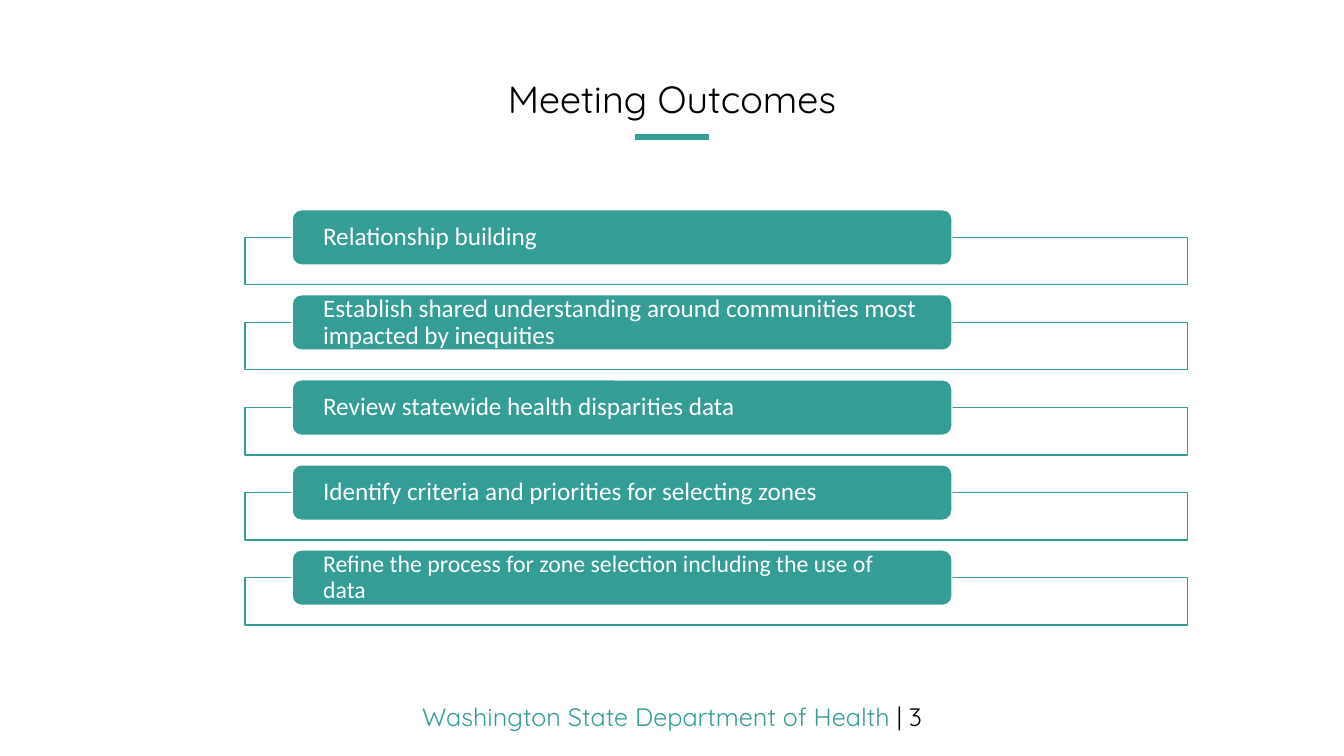
from lxml.etree import SubElement
from pptx import Presentation
from pptx.dml.color import RGBColor
from pptx.enum.shapes import MSO_CONNECTOR, MSO_SHAPE
from pptx.enum.text import MSO_ANCHOR, PP_ALIGN
from pptx.oxml.ns import qn
from pptx.util import Inches, Pt

WIDTH, HEIGHT = 13.33, 7.5
TEAL, WHITE, BLACK = "349D96", "FFFFFF", "000000"
OUTCOMES = [
    ("Relationship building", 18),
    ("Establish shared understanding around communities most impacted by inequities", 18),
    ("Review statewide health disparities data", 18),
    ("Identify criteria and priorities for selecting zones", 18),
    ("Refine the process for zone selection including the use of data", 17),
]


def color(value):
    return RGBColor.from_string(value)


def add_run(para, text, size, font, value):
    span = para.add_run()
    span.text = text
    span.font.size = Pt(size)
    span.font.name = font
    span.font.color.rgb = color(value)


def add_centered_line(page, top, height, runs, size):
    """Place one line of (text, colour) runs across the whole slide width."""
    box = page.shapes.add_textbox(0, Inches(top), Inches(WIDTH), Inches(height))
    frame = box.text_frame
    frame.word_wrap = True
    frame.vertical_anchor = MSO_ANCHOR.MIDDLE
    para = frame.paragraphs[0]
    para.alignment = PP_ALIGN.CENTER
    for text, value in runs:
        add_run(para, text, size, "Quicksand", value)
    return para


def add_title(page, top, height):
    para = add_centered_line(page, top, height, [("Meeting Outcomes", BLACK)], 27)
    para.line_spacing = 0.9
    middle, half, level = WIDTH / 2, 0.37, top + height + 0.09
    rule = page.shapes.add_connector(
        MSO_CONNECTOR.STRAIGHT, Inches(middle - half), Inches(level),
        Inches(middle + half), Inches(level))
    rule.line.color.rgb = color(TEAL)
    rule.line.width = Pt(4)
    SubElement(rule._element.spPr, qn("a:effectLst"))


def add_panel(page, kind, left, top, width, height, fill, line):
    panel = page.shapes.add_shape(
        kind, Inches(left), Inches(top), Inches(width), Inches(height))
    panel.shadow.inherit = False
    panel.fill.solid()
    panel.fill.fore_color.rgb = color(fill)
    panel.line.color.rgb = color(line)
    panel.line.width = Pt(1)
    return panel


def add_outcome(page, left, top, width, text, size):
    """Draw a teal label overlapping the upper edge of an outlined frame."""
    label_height = 0.55
    outline = add_panel(page, MSO_SHAPE.RECTANGLE, left, top + label_height / 2,
                        width, 0.47, WHITE, TEAL)
    alpha = SubElement(outline.fill._xPr.find(qn("a:solidFill"))[0], qn("a:alpha"))
    alpha.set("val", "90000")
    label = add_panel(page, MSO_SHAPE.ROUNDED_RECTANGLE, left + width * 0.05, top,
                      width * 0.7, label_height, TEAL, WHITE)
    frame = label.text_frame
    frame.word_wrap = True
    frame.vertical_anchor = MSO_ANCHOR.MIDDLE
    frame.margin_left = frame.margin_right = Inches(0.28)
    frame.margin_top = frame.margin_bottom = 0
    para = frame.paragraphs[0]
    para.alignment = PP_ALIGN.LEFT
    para.line_spacing = 0.9
    add_run(para, text, size, "Calibri", WHITE)


def add_outcomes(page, left, top, width, height):
    pitch = height / len(OUTCOMES)
    for row, (text, size) in enumerate(OUTCOMES):
        add_outcome(page, left, top + row * pitch, width, text, size)


def add_footer(page, top, height):
    add_centered_line(page, top, height, [
        ("Washington State Department of Health ", TEAL), ("| 3", BLACK)], 18)


def main():
    deck = Presentation()
    deck.slide_width, deck.slide_height = Inches(WIDTH), Inches(HEIGHT)
    page = deck.slides.add_slide(deck.slide_layouts[6])
    add_title(page, 0.74, 0.53)
    add_outcomes(page, 2.43, 2.08, 9.35, 4.22)
    add_footer(page, 6.91, 0.4)
    deck.save("out.pptx")


if __name__ == "__main__":
    main()
